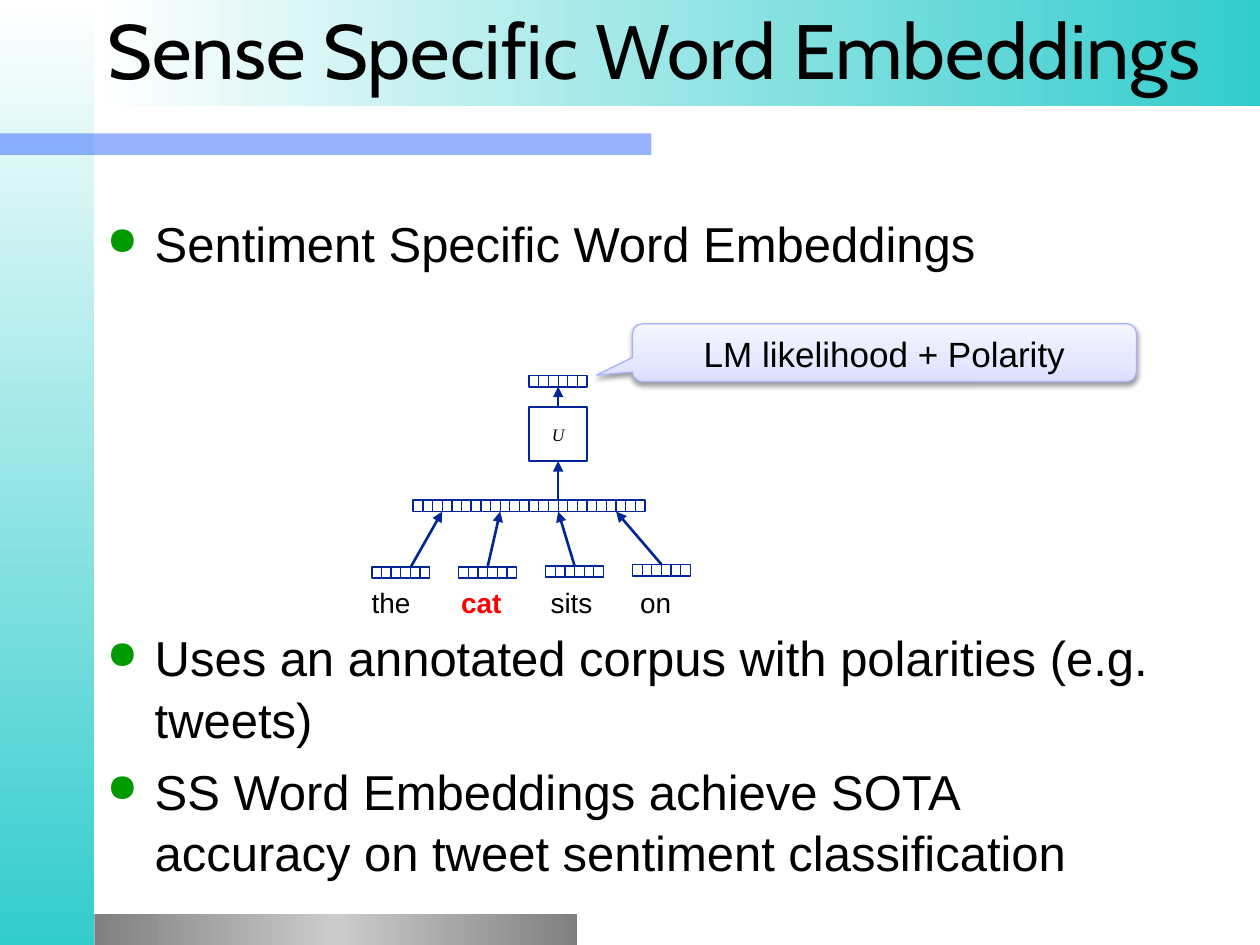
from lxml.etree import SubElement
from pptx import Presentation
from pptx.dml.color import RGBColor
from pptx.enum.shapes import MSO_CONNECTOR, MSO_SHAPE
from pptx.enum.text import MSO_ANCHOR, PP_ALIGN
from pptx.oxml.ns import qn
from pptx.util import Inches, Pt

NAVY, BLACK, WHITE, TEAL = "002699", "000000", "FFFFFF", "33CCCC"
STRIP_WIDTH, STRIP_HEIGHT, STRIP_CELLS = 0.46, 0.09, 6


def color(hex_string):
    return RGBColor.from_string(hex_string)


def style_font(font, size, name="Arial", hex_string=BLACK):
    font.size, font.name = Pt(size), name
    font.color.rgb = color(hex_string)


def fill_gradient(shape, stops, angle):
    """Fill with (percent, colour) stops; the angle runs clockwise."""
    shape.fill.gradient()
    gradient = shape.element.spPr.find(qn("a:gradFill"))
    stop_list = gradient.find(qn("a:gsLst"))
    stop_list.clear()
    for percent, hex_string in stops:
        stop = SubElement(stop_list, qn("a:gs"), pos=str(percent * 1000))
        SubElement(stop, qn("a:srgbClr"), val=hex_string)
    gradient.find(qn("a:lin")).set("ang", str(angle * 60000))


def add_box(shapes, box, kind=MSO_SHAPE.RECTANGLE, fill=None, line=None, width=1):
    shape = shapes.add_shape(kind, *map(Inches, box))
    shape.shadow.inherit = False
    if fill:
        shape.fill.solid()
        shape.fill.fore_color.rgb = color(fill)
    else:
        shape.fill.background()
    if line:
        shape.line.color.rgb = color(line)
        shape.line.width = Pt(width)
    else:
        shape.line.fill.background()
    return shape


def add_line(shapes, start, end, width, arrow=False):
    line = shapes.add_connector(MSO_CONNECTOR.STRAIGHT, *map(Inches, (*start, *end)))
    line.line.color.rgb = color(NAVY)
    line.line.width = Pt(width)
    properties = line.element.spPr
    if arrow:
        SubElement(properties.find(qn("a:ln")), qn("a:tailEnd"), type="triangle")
    SubElement(properties, qn("a:effectLst"))


def add_text(page, box):
    frame = page.shapes.add_textbox(*map(Inches, box)).text_frame
    frame.word_wrap = True
    return frame


def add_backdrop(page, width, height):
    side = add_box(page.shapes, (0, 0, 0.75, height))
    fill_gradient(side, [(0, WHITE), (100, TEAL)], 90)
    rule = add_box(page.shapes, (0, 1.06, 5.17, 0.17), fill="3366FF")
    rule_color = rule.element.spPr.find(qn("a:solidFill"))[0]
    SubElement(rule_color, qn("a:alpha"), val="50000")
    footer = add_box(page.shapes, (0.75, height - 0.25, 3.83, 0.25))
    fill_gradient(footer, [(0, "808080"), (50, "CCCCCC"), (100, "808080")], 0)
    banner = add_box(page.shapes, (0.75, 0, width - 0.75, 0.84))
    fill_gradient(banner, [(0, WHITE), (100, TEAL)], 0)


def place_title(page, box, text):
    title = page.shapes.title
    title.left, title.top, title.width, title.height = map(Inches, box)
    frame = title.text_frame
    frame.text = text
    frame.vertical_anchor = MSO_ANCHOR.MIDDLE
    frame.paragraphs[0].alignment = PP_ALIGN.LEFT
    style_font(frame.paragraphs[0].font, 44, "Cabin")
    title.element.getparent().append(title.element)  # in front of the banner


def add_bullets(page, box, items):
    """Write (text, space before in points) items as bulleted paragraphs."""
    frame = add_text(page, box)
    for index, (text, space) in enumerate(items):
        para = frame.paragraphs[0] if index == 0 else frame.add_paragraph()
        para.text = text
        para.space_before = Pt(space)
        para.line_spacing = 1.05
        style_font(para.font, 28)
        properties = para._p.get_or_add_pPr()
        properties.set("marL", str(Inches(0.38)))
        properties.set("indent", str(-Inches(0.38)))
        bullet = [SubElement(properties, qn(tag)) for tag in ("a:buClr", "a:buSzPct", "a:buChar")]
        SubElement(bullet[0], qn("a:srgbClr"), val="009900")
        bullet[1].set("val", "80000")
        bullet[2].set("char", "●")
        properties.append(properties.find(qn("a:defRPr")))  # schema order


def add_vector(page, left, top):
    """Draw a strip of equal cells as one group."""
    shapes = page.shapes.add_group_shape().shapes
    add_box(shapes, (left, top, STRIP_WIDTH, STRIP_HEIGHT), fill=WHITE, line=NAVY)
    for cell in range(1, STRIP_CELLS):
        x = left + cell * STRIP_WIDTH / STRIP_CELLS
        add_line(shapes, (x, top), (x, top + STRIP_HEIGHT), 0.75)


def add_network(page, left, top):
    """Draw the word vectors, the joined layer, the U matrix and the output."""
    half = STRIP_WIDTH / 2
    joined_left, joined_top = left + 0.33, top + 0.99
    matrix_left, matrix_top, matrix_height = joined_left + 2 * STRIP_WIDTH, top + 0.25, 0.43
    center = matrix_left + half

    words = [("the", 1.52, BLACK), ("cat", 1.52, "FF0000"), ("sits", 1.51, BLACK), ("on", 1.5, BLACK)]
    for index, (word, drop, hex_string) in enumerate(words):
        word_left = left + index * 0.69
        joined_x = joined_left + index * STRIP_WIDTH
        add_vector(page, word_left, top + drop)
        add_vector(page, joined_x, joined_top)
        start_x = word_left + (0.31 if index == 0 else half)
        add_line(page.shapes, (start_x, top + drop),
                 (joined_x + half, joined_top + STRIP_HEIGHT), 1.5, arrow=True)
        frame = add_text(page, (left + index * 0.71, top + 1.67, 0.6, 0.27))
        frame.margin_left = frame.margin_right = frame.margin_top = frame.margin_bottom = 0
        para = frame.paragraphs[0]
        para.text = word
        style_font(para.font, 16, hex_string=hex_string)
        para.font.bold = word == "cat"

    add_vector(page, matrix_left, top)
    matrix = add_box(page.shapes, (matrix_left, matrix_top, STRIP_WIDTH, matrix_height),
                     fill=WHITE, line=NAVY)
    para = matrix.text_frame.paragraphs[0]
    para.text = "U"
    para.alignment = PP_ALIGN.CENTER
    style_font(para.font, 10, "Times New Roman")
    para.font.italic = True
    add_line(page.shapes, (center, joined_top), (center, matrix_top + matrix_height), 1.5, arrow=True)
    add_line(page.shapes, (center, matrix_top), (center, top + STRIP_HEIGHT), 1.5, arrow=True)


def add_callout(page, box, text):
    callout = add_box(page.shapes, box, MSO_SHAPE.ROUNDED_RECTANGULAR_CALLOUT,
                      line="A7B2FB", width=0.75)
    for index, value in enumerate((-0.571, 0.385, 0.167)):
        callout.adjustments[index] = value
    fill_gradient(callout, [(0, "DBDFFF"), (35, "E5E8FF"), (100, "F5F6FF")], 270)
    shadow = SubElement(callout.element.spPr.find(qn("a:effectLst")), qn("a:outerShdw"),
                        blurRad=str(Pt(3.1)), dist=str(Pt(1.6)), dir="5400000", rotWithShape="0")
    SubElement(SubElement(shadow, qn("a:srgbClr"), val=BLACK), qn("a:alpha"), val="38000")
    callout.text_frame.vertical_anchor = MSO_ANCHOR.TOP
    para = callout.text_frame.paragraphs[0]
    para.text = text
    para.alignment = PP_ALIGN.CENTER
    style_font(para.font, 20)


def main():
    deck = Presentation()
    deck.slide_width, deck.slide_height = Inches(10), Inches(7.5)
    page = deck.slides.add_slide(deck.slide_layouts[5])
    add_backdrop(page, 10, 7.5)
    place_title(page, (0.75, -0.03, 9.26, 0.83), "Sense Specific Word Embeddings")
    add_bullets(page, (0.75, 1.62, 8.5, 5.28), [
        ("Sentiment Specific Word Embeddings", 5.6),
        ("Uses an annotated corpus with polarities (e.g. tweets)", 201.6),
        ("SS Word Embeddings achieve SOTA accuracy on tweet sentiment classification", 5.6),
    ])
    add_network(page, 2.95, 2.98)
    add_callout(page, (5.02, 2.57, 4, 0.46), "LM likelihood + Polarity")
    deck.save("out.pptx")


if __name__ == "__main__":
    main()
